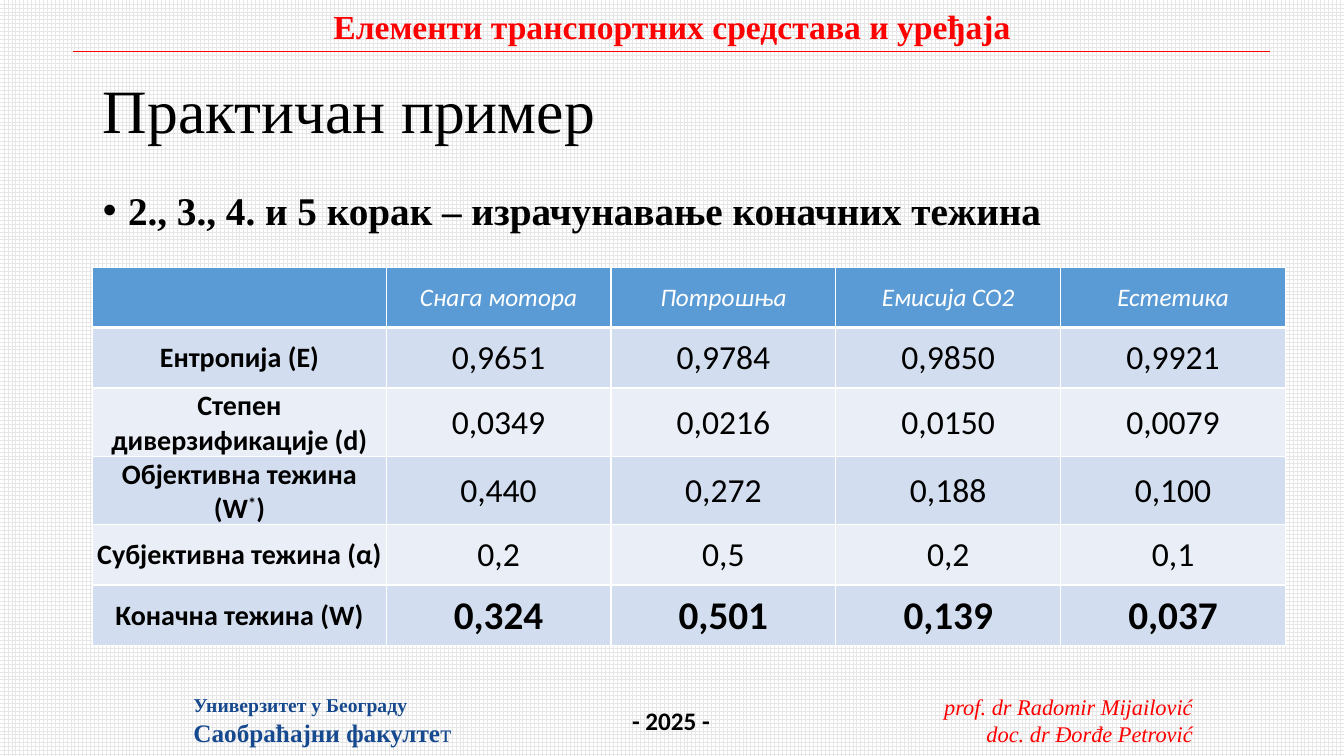
from typing import NamedTuple

from lxml import etree
from pptx import Presentation
from pptx import util as u
from pptx.dml.color import RGBColor
from pptx.enum import dml, shapes, text
from pptx.oxml import ns

RED = RGBColor(0xFF, 0x00, 0x00)
BLACK = RGBColor(0x00, 0x00, 0x00)
WHITE = RGBColor(0xFF, 0xFF, 0xFF)
NAVY = RGBColor(0x16, 0x49, 0x8E)
GRID = RGBColor(0xE7, 0xE6, 0xE6)
HEAD = RGBColor(0x5B, 0x9B, 0xD5)
BAND_DARK = RGBColor(0xD2, 0xDE, 0xEF)
BAND_LIGHT = RGBColor(0xEA, 0xEF, 0xF7)
SERIF = "Times New Roman"
SANS = "Calibri"
LEFT, CENTER, RIGHT = text.PP_ALIGN.LEFT, text.PP_ALIGN.CENTER, text.PP_ALIGN.RIGHT


class Run(NamedTuple):
    text: str
    size: float
    color: RGBColor = BLACK
    font: str = SERIF
    bold: bool = False
    italic: bool = False
    raised: bool = False


class Label(NamedTuple):
    left: float
    top: float
    width: float
    height: float
    align: text.PP_ALIGN
    lines: list[list[Run]]


class Row(NamedTuple):
    name: str
    values: list[str]
    size: float = 24
    bold: bool = False


LABELS = [
    Label(9.22, 6.83, 2.71, 0.64, RIGHT, [
        [Run("prof. dr Radomir Mijailović", 16, RED, italic=True)],
        [Run("doc. dr Đorđe Petrović", 16, RED, italic=True)]]),
    Label(3.17, 0.01, 6.99, 0.5, CENTER, [
        [Run("Елементи транспортних средстава и уређаја", 24, RED, bold=True)]]),
    Label(6.17, 6.95, 0.98, 0.4, LEFT, [[Run("- 2025 -", 18, font=SANS, bold=True)]]),
    Label(1.82, 6.83, 2.79, 0.64, LEFT, [
        [Run("Универзитет у Београду", 14, NAVY, bold=True)],
        [Run("Саобраћајни факулте", 18, NAVY, bold=True), Run("т", 18, NAVY)]]),
]
CRITERIA = ["Снага мотора", "Потрошња", "Емисија CO2", "Естетика"]
ROWS = [
    Row("Ентропија (Е)", ["0,9651", "0,9784", "0,9850", "0,9921"]),
    Row("Степен диверзификације (d)", ["0,0349", "0,0216", "0,0150", "0,0079"]),
    Row("Објективна тежина (W*)", ["0,440", "0,272", "0,188", "0,100"]),
    Row("Субјективна тежина (α)", ["0,2", "0,5", "0,2", "0,1"]),
    Row("Коначна тежина (W)", ["0,324", "0,501", "0,139", "0,037"], 28, True),
]


def add_runs(p, runs: list[Run]) -> None:
    for run in runs:
        r = p.add_run()
        r.text = run.text
        r.font.size = u.Pt(run.size)
        r.font.name = run.font
        r.font.bold = run.bold
        r.font.italic = run.italic
        r.font.color.rgb = run.color
        if run.raised:
            r._r.get_or_add_rPr().set("baseline", "30000")


def add_label(s, label: Label) -> None:
    sp = s.shapes.add_textbox(*map(u.Inches, label[:4]))
    tf = sp.text_frame
    tf.word_wrap = False
    tf.auto_size = text.MSO_AUTO_SIZE.SHAPE_TO_FIT_TEXT
    for i, runs in enumerate(label.lines):
        p = tf.add_paragraph() if i else tf.paragraphs[0]
        p.alignment = label.align
        add_runs(p, runs)


def add_rule(s) -> None:
    y = u.Inches(0.51)
    line = s.shapes.add_connector(
        shapes.MSO_CONNECTOR.STRAIGHT, u.Inches(0.72), y, u.Inches(12.6), y)
    line.line.color.rgb = RED
    line.line.width = u.Pt(0.5)
    etree.SubElement(line._element.spPr, ns.qn("a:effectLst"))


def fill_placeholder(sp, box: tuple[float, ...], anchor: text.MSO_ANCHOR, run: Run):
    sp.left, sp.top, sp.width, sp.height = map(u.Inches, box)
    tf = sp.text_frame
    tf.word_wrap = True
    tf.auto_size = text.MSO_AUTO_SIZE.NONE
    tf.vertical_anchor = anchor
    p = tf.paragraphs[0]
    p.alignment = LEFT
    p.line_spacing = 0.9
    p.space_before = u.Pt(0)
    add_runs(p, [run])
    return p


def add_bullet(p) -> None:
    pPr = p._p.get_or_add_pPr()
    pPr.set("marL", str(u.Inches(0.25)))
    pPr.set("indent", str(-u.Inches(0.25)))
    etree.SubElement(pPr, ns.qn("a:buFont")).set("typeface", "Arial")
    etree.SubElement(pPr, ns.qn("a:buChar")).set("char", "•")


def set_borders(cell, top: float, bottom: float) -> None:
    tcPr = cell._tc.get_or_add_tcPr()
    for i, (side, width) in enumerate(zip("LRTB", (1, 1, top, bottom))):
        ln = etree.Element(ns.qn(f"a:ln{side}"), w=str(u.Pt(width)))
        fill = etree.SubElement(ln, ns.qn("a:solidFill"))
        etree.SubElement(fill, ns.qn("a:srgbClr")).set("val", str(WHITE))
        tcPr.insert(i, ln)


def name_runs(name: str) -> list[Run]:
    before, star, after = name.partition("*")
    parts = [Run(t, 20, font=SANS, bold=True, raised=t == "*") for t in (before, star, after)]
    return [run for run in parts if run.text]


def add_weights(s) -> None:
    grid = [[[]] + [[Run(c, 18, WHITE, SANS, italic=True)] for c in CRITERIA]]
    for row in ROWS:
        values = [[Run(v, row.size, font=SANS, bold=row.bold)] for v in row.values]
        grid.append([name_runs(row.name)] + values)
    tbl = s.shapes.add_table(len(grid), len(grid[0]), u.Inches(0.92), u.Inches(2.65),
                             u.Inches(11.81), u.Inches(3.6)).table
    for i, col in enumerate(tbl.columns):
        col.width = u.Inches(2.23 if i else 2.91)
    for i, cells in enumerate(grid):
        tbl.rows[i].height = u.Inches(0.6)
        for j, runs in enumerate(cells):
            cell = tbl.cell(i, j)
            cell.margin_left = cell.margin_right = cell.margin_top = u.Inches(0.01)
            cell.margin_bottom = 0
            cell.vertical_anchor = text.MSO_ANCHOR.MIDDLE
            cell.fill.solid()
            cell.fill.fore_color.rgb = (BAND_DARK if i % 2 else BAND_LIGHT) if i else HEAD
            set_borders(cell, 3 if i == 1 else 1, 3 if i == 0 else 1)
            p = cell.text_frame.paragraphs[0]
            p.alignment = CENTER
            add_runs(p, runs)


def main() -> None:
    prs = Presentation()
    prs.slide_width, prs.slide_height = u.Inches(13.33), u.Inches(7.5)
    s = prs.slides.add_slide(prs.slide_layouts[1])
    bg = s.background.fill
    bg.patterned()
    bg.pattern = dml.MSO_PATTERN.LARGE_GRID
    bg.fore_color.rgb = GRID
    bg.back_color.rgb = WHITE

    add_rule(s)
    for label in LABELS:
        add_label(s, label)
    fill_placeholder(s.shapes.title, (0.92, 0.4, 11.5, 1.45), text.MSO_ANCHOR.MIDDLE,
                     Run("Практичан пример", 44))
    step = Run("2., 3., 4. и 5 корак – израчунавање коначних тежина", 28, bold=True)
    add_bullet(fill_placeholder(s.placeholders[1], (0.92, 1.85, 11.5, 4.76),
                                text.MSO_ANCHOR.TOP, step))
    add_weights(s)
    prs.save("out.pptx")


if __name__ == "__main__":
    main()
